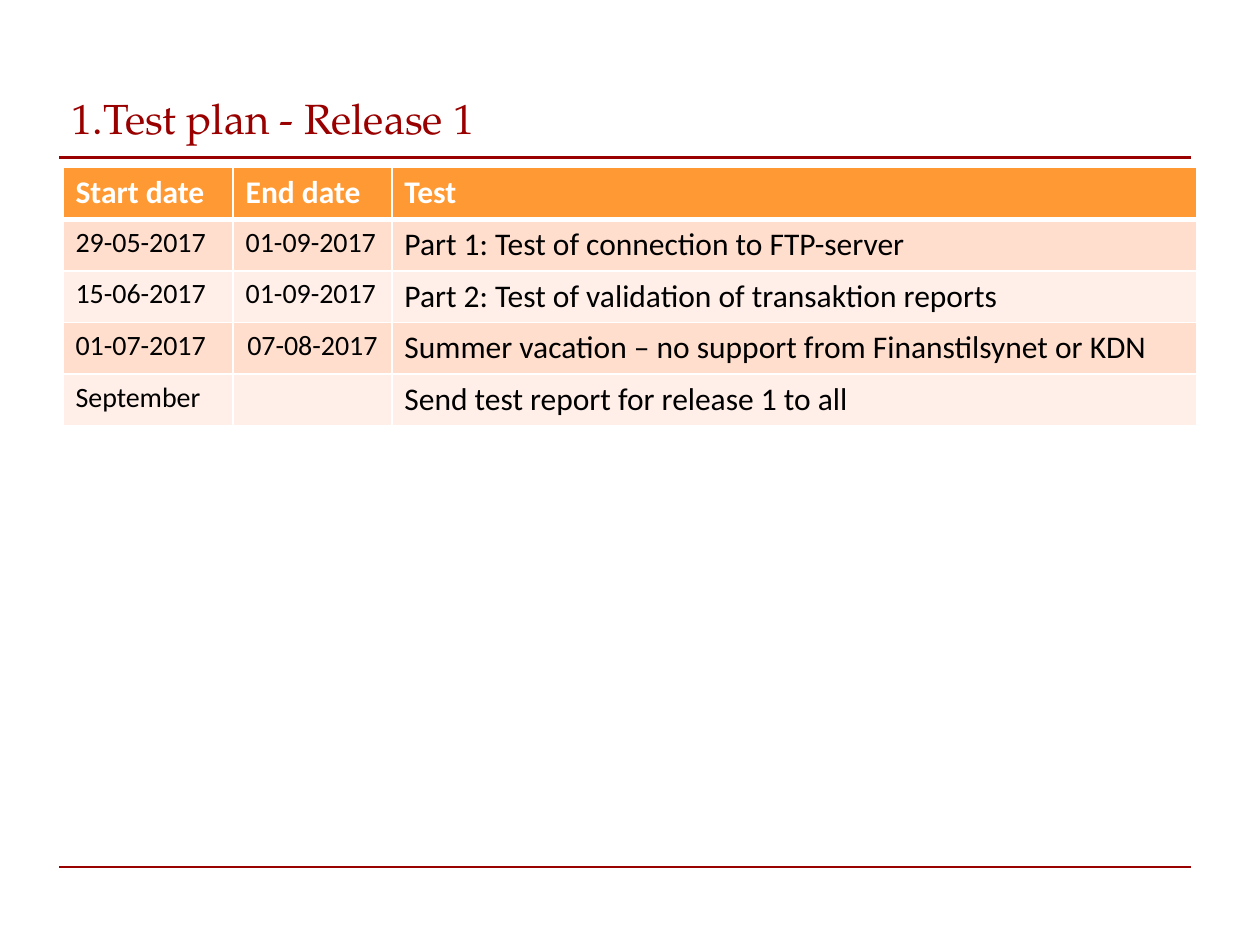
import lxml.etree
import pptx
import pptx.dml.color
import pptx.enum.shapes
import pptx.enum.text
import pptx.oxml
import pptx.oxml.ns
import pptx.util

Inches = pptx.util.Inches
Pt = pptx.util.Pt
RGBColor = pptx.dml.color.RGBColor
Align = pptx.enum.text.PP_ALIGN
qn = pptx.oxml.ns.qn

DARK_RED = RGBColor(0x99, 0x00, 0x00)
ORANGE = RGBColor(0xFF, 0x99, 0x33)
PEACH = RGBColor(0xFF, 0xDE, 0xCE)
PALE_PEACH = RGBColor(0xFF, 0xEF, 0xE8)
WHITE = RGBColor(0xFF, 0xFF, 0xFF)
BLACK = RGBColor(0x00, 0x00, 0x00)

TITLE_FONT = {"name": "TeX Gyre Pagella", "size": Pt(24), "bold": False}
HEADER_FONT = {"name": "Calibri", "size": Pt(18), "bold": True}
DATE_FONT = {"name": "Calibri", "size": Pt(16), "bold": False}
TEST_FONT = {"name": "Calibri", "size": Pt(18), "bold": False}

COLUMN_WIDTHS = (1.35, 1.26, 6.39)
ROW_HEIGHT = 0.41
PLAN = (
    ("Start date", "End date", "Test"),
    ("29-05-2017", "01-09-2017", "Part 1: Test of connection to FTP-server"),
    ("15-06-2017", "01-09-2017", "Part 2: Test of validation of transaktion reports"),
    ("01-07-2017", "07-08-2017", "Summer vacation – no support from Finanstilsynet or KDN"),
    ("September", "", "Send test report for release 1 to all"),
)
CENTRED_CELL = (3, 1)


def format_font(font, values, color):
    for name, value in values.items():
        setattr(font, name, value)
    font.color.rgb = color


def add_rule(page, left, top, width):
    """Draw a horizontal dark red line."""
    rule = page.shapes.add_connector(
        pptx.enum.shapes.MSO_CONNECTOR.STRAIGHT,
        Inches(left), Inches(top), Inches(left + width), Inches(top))
    rule.line.color.rgb = DARK_RED
    rule.line.width = Pt(1.25)
    lxml.etree.SubElement(rule._element.spPr, qn("a:effectLst"))


def place_title(page, text, left, top, width, height):
    title = page.shapes.title
    box = {"left": left, "top": top, "width": width, "height": height}
    for name, value in box.items():
        setattr(title, name, Inches(value))
    frame = title.text_frame
    frame.text = text
    frame.word_wrap = True
    frame.vertical_anchor = pptx.enum.text.MSO_ANCHOR.MIDDLE
    para = frame.paragraphs[0]
    para.alignment = Align.LEFT
    format_font(para.runs[0].font, TITLE_FONT, DARK_RED)


def set_borders(cell, bottom_width):
    """Give the cell white borders, 1 pt except at the bottom."""
    properties = cell._tc.get_or_add_tcPr()
    widths = {"lnL": 1, "lnR": 1, "lnT": 1, "lnB": bottom_width}
    for index, (side, width) in enumerate(widths.items()):
        border = lxml.etree.Element(qn("a:" + side), w=str(Pt(width)))
        fill = lxml.etree.SubElement(border, qn("a:solidFill"))
        lxml.etree.SubElement(fill, qn("a:srgbClr"), val=str(WHITE))
        properties.insert(index, border)


def fill_cell(cell, text, row, column):
    header = row == 0
    cell.fill.solid()
    cell.fill.fore_color.rgb = ORANGE if header else PEACH if row % 2 else PALE_PEACH
    set_borders(cell, 3 if header else 1)
    para = cell.text_frame.paragraphs[0]
    para.alignment = Align.CENTER if (row, column) == CENTRED_CELL else Align.LEFT
    if text:
        span = para.add_run()
        span.text = text
        values = HEADER_FONT if header else TEST_FONT if column == 2 else DATE_FONT
        format_font(span.font, values, WHITE if header else BLACK)


def add_plan_table(page, left, top):
    table = page.shapes.add_table(
        len(PLAN), len(COLUMN_WIDTHS), Inches(left), Inches(top),
        Inches(sum(COLUMN_WIDTHS)), Inches(ROW_HEIGHT * len(PLAN))).table
    for column, width in zip(table.columns, COLUMN_WIDTHS):
        column.width = Inches(width)
    for row, texts in enumerate(PLAN):
        table.rows[row].height = Inches(ROW_HEIGHT)
        for column, text in enumerate(texts):
            fill_cell(table.cell(row, column), text, row, column)


def main():
    deck = pptx.Presentation()
    deck.slide_width, deck.slide_height = Inches(10), Inches(7.5)
    page = deck.slides.add_slide(deck.slide_layouts[5])
    for top in (1.25, 6.88):
        add_rule(page, 0.47, top, 8.98)
    place_title(page, "1.Test plan - Release 1", 0.47, 0.59, 9, 0.69)
    add_plan_table(page, 0.5, 1.33)
    deck.save("out.pptx")


if __name__ == "__main__":
    main()
